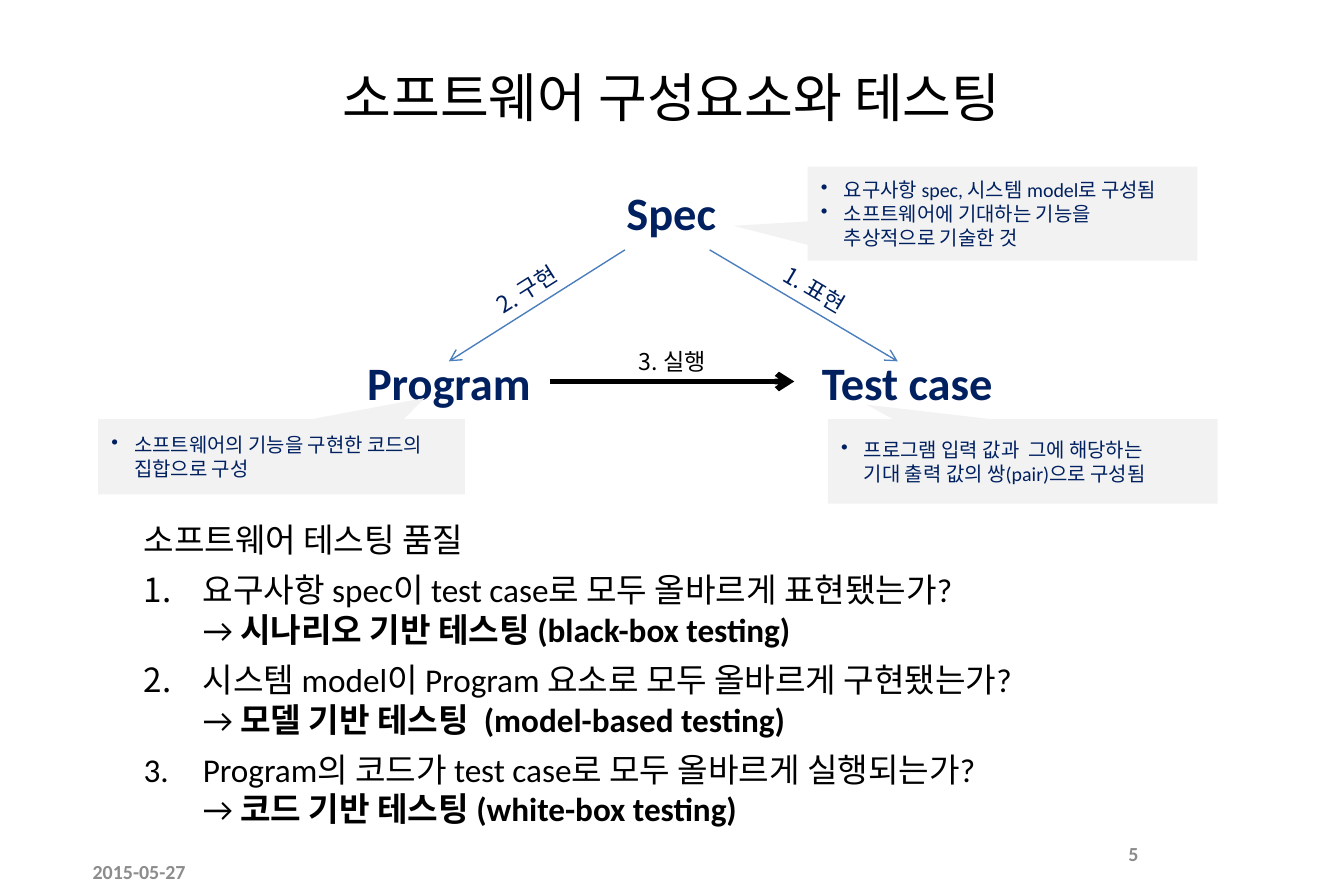
from dataclasses import dataclass

from lxml import etree
from pptx import Presentation
from pptx.dml.color import RGBColor
from pptx.enum.shapes import MSO_CONNECTOR, MSO_SHAPE
from pptx.enum.text import MSO_ANCHOR, PP_ALIGN
from pptx.oxml.ns import qn
from pptx.util import Inches, Pt

LEFT, CENTER, RIGHT = PP_ALIGN.LEFT, PP_ALIGN.CENTER, PP_ALIGN.RIGHT
TOP, MIDDLE = MSO_ANCHOR.TOP, MSO_ANCHOR.MIDDLE
ROUNDED, CALLOUT = MSO_SHAPE.ROUNDED_RECTANGLE, MSO_SHAPE.RECTANGULAR_CALLOUT
STRAIGHT = MSO_CONNECTOR.STRAIGHT


@dataclass(frozen=True)
class Theme:
    font: str = "Calibri"
    label_font: str = "Noto Sans CJK KR"
    black: str = "000000"
    navy: str = "002060"
    blue: str = "4B7EBC"
    gray: str = "8C8C8C"
    pale: str = "F2F2F2"
    title: float = 28.4
    node: float = 24.9
    body: float = 17.8
    label: float = 12.4
    small: float = 10.7


THEME = Theme()
COLUMNS, ROWS = 100, 66.7
CELL = 0.1  # inches

NODE_TOP, NODE_HEIGHT = 24.2, 8.4
NODES = [
    ("Spec", (44.3, 11.6, 11.3, NODE_HEIGHT)),
    ("Program", (25.9, NODE_TOP, 15, NODE_HEIGHT)),
    ("Test case", (59.1, NODE_TOP, 16.8, NODE_HEIGHT)),
]
ARROWS = [
    ((46.5, 18.6), (33.4, 26.9), THEME.blue, 0.75),
    ((52.8, 18.6), (66.8, 26.9), THEME.blue, 0.75),
    ((40.9, 28.4), (59.1, 28.4), THEME.black, 3),
]
LABELS = [
    ("1. 표현", 55, 20, 30.6, THEME.navy),
    ("3. 실행", 44.4, 25.4, 0, THEME.black),
    ("2. 구현", 33.6, 20, -32.3, THEME.navy),
]
CALLOUTS = [
    (["요구사항 spec, 시스템 model로 구성됨",
      "소프트웨어에 기대하는 기능을 \n추상적으로 기술한 것"],
     (60.1, 12.4, 29, 7), (-0.69, 0.13)),
    (["프로그램 입력 값과  그에 해당하는 \n기대 출력 값의 쌍(pair)으로 구성됨"],
     (61.6, 31.2, 29, 6.3), (-0.4, -0.67)),
    (["소프트웨어의 기능을 구현한 코드의 \n집합으로 구성"],
     (7.3, 31.2, 27.3, 5.6), (0.39, -0.78)),
]
QUESTIONS = [
    ("요구사항 spec이 test case로 모두 올바르게 표현됐는가? ",
     "시나리오 기반 테스팅 (black-box testing)"),
    ("시스템 model이 Program 요소로 모두 올바르게 구현됐는가? ",
     "모델 기반 테스팅  (model-based testing)"),
    ("Program의 코드가 test case로 모두 올바르게 실행되는가? ",
     "코드 기반 테스팅 (white-box testing)"),
]


def grid(*cells):
    return [Inches(cell * CELL) for cell in cells]


def set_bullet(para, tag, indent, **attributes):
    properties = para._p.get_or_add_pPr()
    properties.set("marL", str(Inches(indent)))
    properties.set("indent", str(-Inches(indent)))
    etree.SubElement(properties, qn(tag), attributes)


def write_para(frame, text, *, size, color=THEME.black, font=THEME.font,
               bold=False, align=LEFT, before=0, strong=""):
    """Add one paragraph; newlines become line breaks, strong is a bold ending."""
    first = frame.paragraphs[0]
    para = frame.add_paragraph() if first.runs else first
    para.alignment = align
    para.space_before = Pt(before)
    for part, is_bold in ((text, bold), (strong, True)):
        for number, line in enumerate(part.split("\n")):
            if number:
                para.add_line_break()
            if not line:
                continue
            span = para.add_run()
            span.text = line
            span.font.name = font
            span.font.size = Pt(size)
            span.font.bold = is_bold
            span.font.color.rgb = RGBColor.from_string(color)
    return para


def add_text_frame(page, place, anchor=MIDDLE, rotation=0):
    box = page.shapes.add_textbox(*grid(*place))
    box.rotation = rotation
    box.text_frame.word_wrap = True
    box.text_frame.vertical_anchor = anchor
    return box.text_frame


def add_plain_shape(page, kind, place, fill=None):
    shape = page.shapes.add_shape(kind, *grid(*place))
    shape.shadow.inherit = False
    shape.line.fill.background()
    if fill:
        shape.fill.solid()
        shape.fill.fore_color.rgb = RGBColor.from_string(fill)
    else:
        shape.fill.background()
    shape.text_frame.word_wrap = True
    shape.text_frame.vertical_anchor = MIDDLE
    return shape


def add_node(page, name, place):
    node = add_plain_shape(page, ROUNDED, place)
    write_para(node.text_frame, name, size=THEME.node, color=THEME.navy,
               bold=True, align=CENTER)


def add_arrow(page, start, end, color, width):
    arrow = page.shapes.add_connector(STRAIGHT, *grid(*start, *end))
    arrow.line.color.rgb = RGBColor.from_string(color)
    arrow.line.width = Pt(width)
    etree.SubElement(arrow.line._get_or_add_ln(), qn("a:tailEnd"), type="arrow")
    etree.SubElement(arrow._element.spPr, qn("a:effectLst"))


def add_callout(page, notes, place, pointer):
    callout = add_plain_shape(page, CALLOUT, place, THEME.pale)
    for index, share in enumerate(pointer):
        callout.adjustments[index] = share
    for note in notes:
        para = write_para(callout.text_frame, note, size=THEME.small,
                          color=THEME.navy)
        set_bullet(para, "a:buChar", 0.17, char="•")


def add_questions(page):
    frame = add_text_frame(page, (9.7, 38.2, 80.8, 25.9), TOP)
    write_para(frame, "소프트웨어 테스팅 품질", size=THEME.body, before=5.3)
    for question, answer in QUESTIONS:
        para = write_para(frame, question + "\n→ ", strong=answer,
                          size=THEME.body, before=5.3)
        set_bullet(para, "a:buAutoNum", 0.44, type="arabicPeriod")


def main():
    deck = Presentation()
    deck.slide_width, deck.slide_height = grid(COLUMNS, ROWS)
    page = deck.slides.add_slide(deck.slide_layouts[6])

    title = add_text_frame(page, (10, 2.7, 80, 9))
    write_para(title, "소프트웨어 구성요소와 테스팅", size=THEME.title, align=CENTER)
    add_questions(page)
    for text, place in (("2015-05-27", (5, 63.1, 9.8, 3.5)),
                        ("5", (69.3, 61.8, 16.4, 3.5))):
        write_para(add_text_frame(page, place), text, size=THEME.small,
                   color=THEME.gray, bold=True, align=RIGHT)

    for node in NODES:
        add_node(page, *node)
    for arrow in ARROWS:
        add_arrow(page, *arrow)
    for callout in CALLOUTS:
        add_callout(page, *callout)
    for text, left, top, rotation, color in LABELS:
        frame = add_text_frame(page, (left, top, 11.2, 3.1), TOP, rotation)
        write_para(frame, text, size=THEME.label, color=color,
                   font=THEME.label_font, align=CENTER)

    deck.save("out.pptx")


if __name__ == "__main__":
    main()
